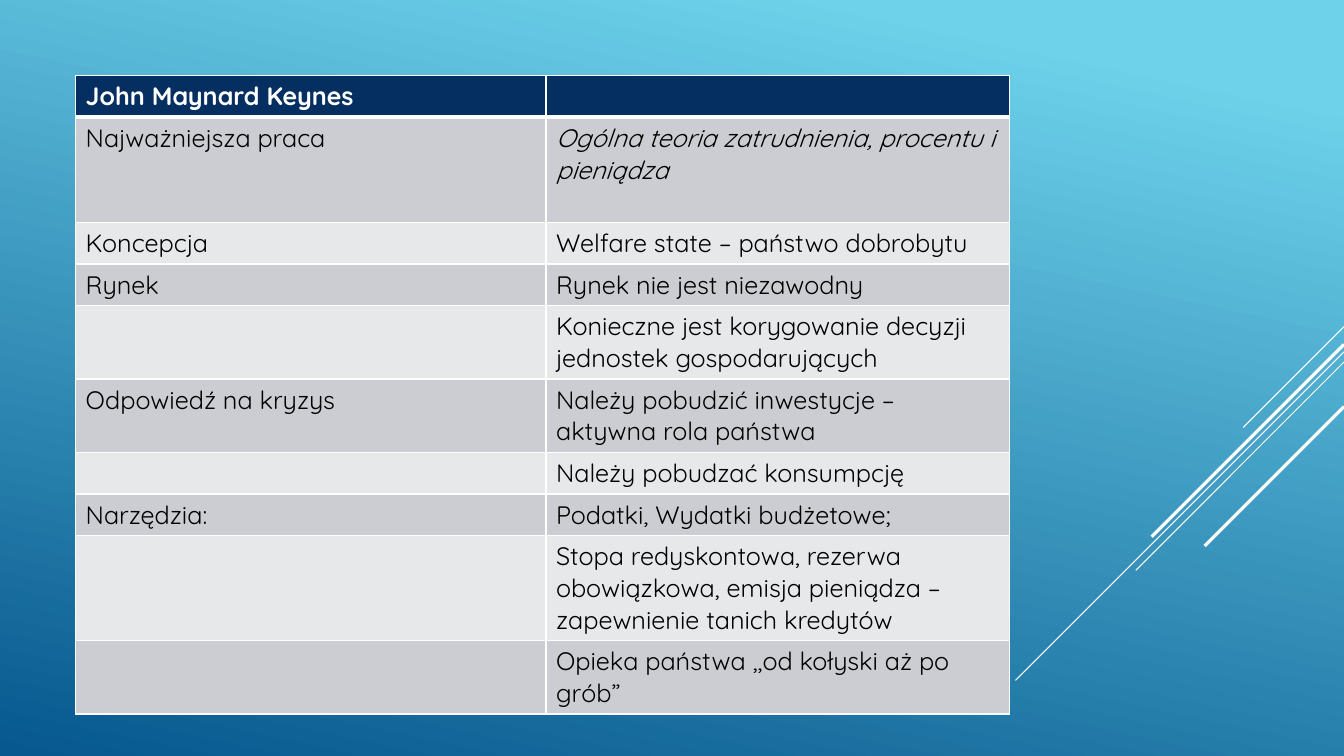
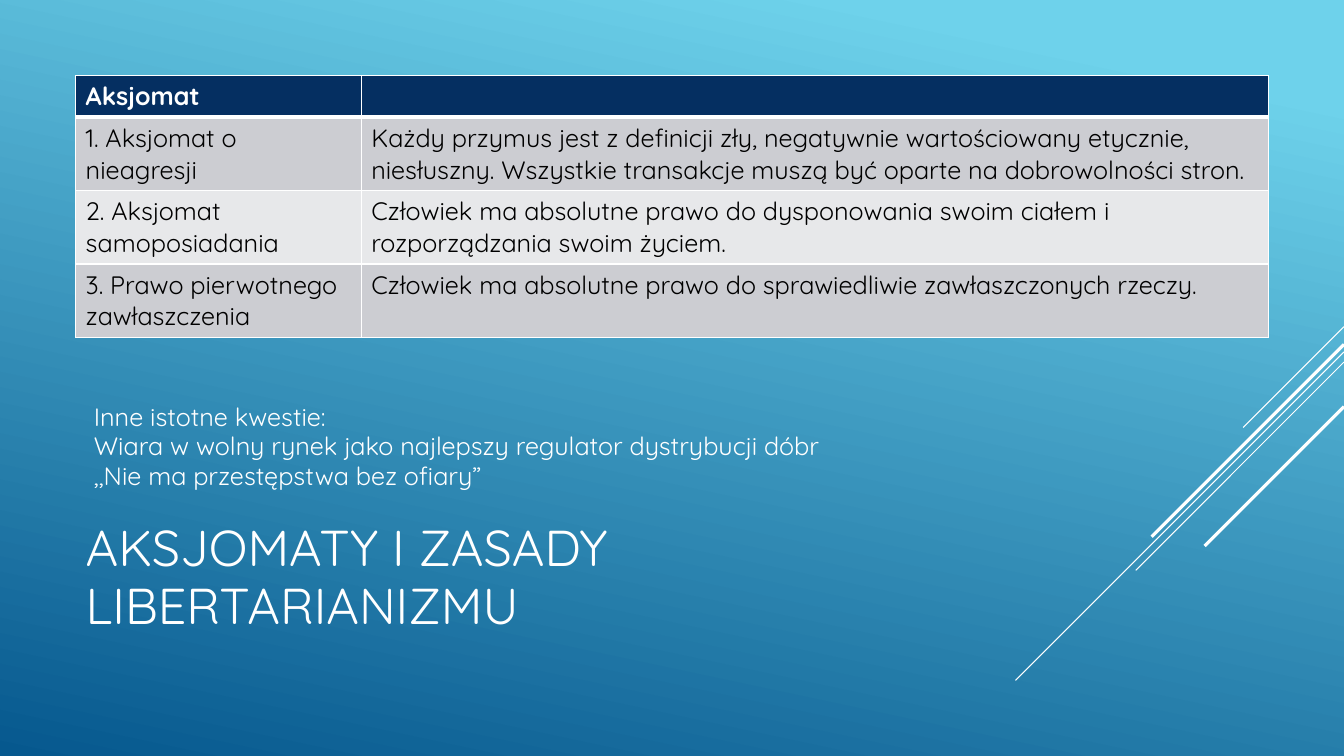
from lxml.etree import SubElement
from pptx import Presentation
from pptx.dml.color import RGBColor
from pptx.enum.shapes import MSO_CONNECTOR
from pptx.enum.text import MSO_ANCHOR, MSO_AUTO_SIZE, PP_ALIGN
from pptx.oxml import parse_xml
from pptx.oxml.ns import nsdecls, qn
from pptx.util import Inches, Pt

FONT = "Quicksand"
WHITE, BLACK, NAVY = "FFFFFF", "000000", "052F61"
BANDS = "CCCDD2", "E7E8EA"
GRADIENT = (0.1, "6ED2EB"), (1, "06588E")
COLUMNS, ROWS = 16, 9
TITLE_ONLY, BLANK = 5, 6
MARGIN = 0.9
LINE_HEIGHT, ROW_PADDING = 0.38, 0.11
DIAGONALS = (
    (3.89, 1.2, 0.75),
    (4.19, 3.91, 0.75),
    (4.31, 2.48, 0.75),
    (4.1, 2.29, 2.25),
    (4.84, 1.66, 2.25),
)

KEYNES = (
    ("John Maynard Keynes", "", 1),
    ("Najważniejsza praca", "Ogólna teoria zatrudnienia, procentu i pieniądza", 3),
    ("Koncepcja", "Welfare state – państwo dobrobytu", 1),
    ("Rynek", "Rynek nie jest niezawodny", 1),
    ("", "Konieczne jest korygowanie decyzji jednostek gospodarujących", 2),
    ("Odpowiedź na kryzys", "Należy pobudzić inwestycje – aktywna rola państwa", 2),
    ("", "Należy pobudzać konsumpcję", 1),
    ("Narzędzia:", "Podatki, Wydatki budżetowe;", 1),
    ("", "Stopa redyskontowa, rezerwa obowiązkowa, emisja pieniądza – "
         "zapewnienie tanich kredytów", 3),
    ("", "Opieka państwa ,,od kołyski aż po grób”", 2),
)
AXIOMS = (
    ("Aksjomat", "", 1),
    ("1. Aksjomat o nieagresji",
     "Każdy przymus jest z definicji zły, negatywnie wartościowany etycznie, niesłuszny. "
     "Wszystkie transakcje muszą być oparte na dobrowolności stron.", 2),
    ("2. Aksjomat samoposiadania",
     "Człowiek ma absolutne prawo do dysponowania swoim ciałem i "
     "rozporządzania swoim życiem.", 2),
    ("3. Prawo pierwotnego zawłaszczenia",
     "Człowiek ma absolutne prawo do sprawiedliwie zawłaszczonych rzeczy.", 2),
)
OTHER_ISSUES = (
    "Inne istotne kwestie:",
    "Wiara w wolny rynek jako najlepszy regulator dystrybucji dóbr",
    ",,Nie ma przestępstwa bez ofiary”",
)


def color(value):
    """Turn a hex string into a colour."""
    return RGBColor.from_string(value)


def write(frame, *lines, size=18, ink=WHITE, bold=False, italic=False, spacing=None):
    """Write one formatted paragraph per line."""
    frame.word_wrap = True
    for index, line in enumerate(lines):
        para = frame.paragraphs[0] if index == 0 else frame.add_paragraph()
        para.alignment = PP_ALIGN.LEFT
        para.line_spacing = spacing
        span = para.add_run()
        span.text = line
        font = span.font
        font.name, font.size, font.bold, font.italic = FONT, Pt(size), bold, italic
        font.color.rgb = color(ink)


def add_borders(cell, top, bottom):
    """Draw white borders round a table cell."""
    properties = cell._tc.get_or_add_tcPr()
    widths = {"L": 1, "R": 1, "T": top, "B": bottom}
    for index, (side, width) in enumerate(widths.items()):
        properties.insert(index, parse_xml(
            f'<a:ln{side} {nsdecls("a")} w="{Pt(width)}"><a:solidFill>'
            f'<a:srgbClr val="{WHITE}"/></a:solidFill></a:ln{side}>'))


class Slides:
    """Hold the shared style and the current slide."""

    def __init__(self):
        """Prepare the deck and its gradient background."""
        self.deck = Presentation()
        self.deck.slide_width, self.deck.slide_height = Inches(13.33), Inches(7.5)
        fill = self.deck.slide_master.background.fill
        fill.gradient()
        fill.gradient_angle = 360 - 102
        for stop, (position, value) in zip(fill.gradient_stops, GRADIENT):
            stop.position = position
            stop.color.rgb = color(value)

    def across(self, columns):
        """Convert grid columns to a length."""
        return round(self.deck.slide_width * columns / COLUMNS)

    def down(self, rows):
        """Convert grid rows to a length."""
        return round(self.deck.slide_height * rows / ROWS)

    def area(self, left, top, width, height):
        """Convert a grid area to lengths."""
        return self.across(left), self.down(top), self.across(width), self.down(height)

    def start(self, layout):
        """Start a slide with the diagonal lines."""
        self.page = self.deck.slides.add_slide(self.deck.slide_layouts[layout])
        for top, reach, width in DIAGONALS:
            self.diagonal(top, reach, width)

    def diagonal(self, top, reach, width):
        """Draw a line down and left from the right edge."""
        line = self.page.shapes.add_connector(
            MSO_CONNECTOR.STRAIGHT, self.across(COLUMNS), self.down(top),
            self.across(COLUMNS - reach), self.down(top + reach))
        line.line.color.rgb = color(WHITE)
        line.line.width = Pt(width)
        SubElement(line._element.spPr, qn("a:effectLst"))

    def title(self, text, *area):
        """Place and fill the title."""
        box = self.page.shapes.title
        box.left, box.top, box.width, box.height = self.area(*area)
        box.text_frame.auto_size = MSO_AUTO_SIZE.NONE
        box.text_frame.vertical_anchor = MSO_ANCHOR.MIDDLE
        write(box.text_frame, text, size=36, spacing=0.97)

    def text(self, lines, *area):
        """Add a text box."""
        box = self.page.shapes.add_textbox(*self.area(*area))
        write(box.text_frame, *lines, spacing=0.97)

    def table(self, records, widths, italic_cell=None):
        """Add a banded table with rows sized by line count."""
        heights = [ROW_PADDING + LINE_HEIGHT * lines for *_, lines in records]
        table = self.page.shapes.add_table(
            len(records), len(widths),
            *self.area(MARGIN, MARGIN, sum(widths), sum(heights))).table
        table.horz_banding = False
        for column, width in zip(table.columns, widths):
            column.width = self.across(width)
        for row, (*texts, _) in enumerate(records):
            table.rows[row].height = self.down(heights[row])
            header = row == 0
            for column, text in enumerate(texts):
                cell = table.cell(row, column)
                cell.fill.solid()
                cell.fill.fore_color.rgb = color(NAVY if header else BANDS[(row - 1) % 2])
                add_borders(cell, top=3 if row == 1 else 1, bottom=3 if header else 1)
                if text:
                    write(cell.text_frame, text, ink=WHITE if header else BLACK,
                          bold=header, italic=(row, column) == italic_cell)


def main():
    """Build and save both slides."""
    slides = Slides()
    slides.start(BLANK)
    slides.table(KEYNES, (5.6, 5.52), italic_cell=(1, 1))

    slides.start(TITLE_ONLY)
    slides.title("AKSJOMATY I ZASADY LIBERTARIANIZMU", MARGIN, 5.89, 11.2, 1.98)
    slides.table(AXIOMS, (3.4, 10.8))
    slides.text(OTHER_ISSUES, 1, 4.74, 12.97, 1.57)
    slides.deck.save("out.pptx")


if __name__ == "__main__":
    main()
